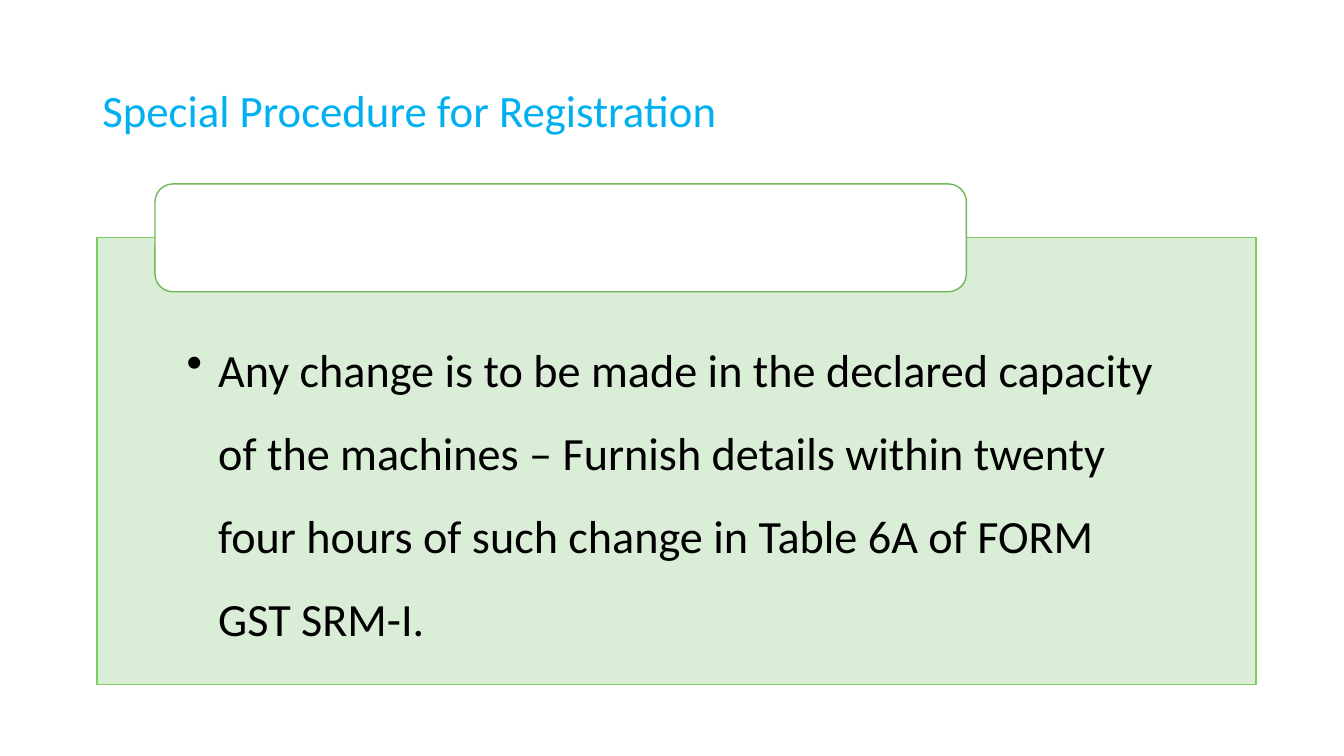
import pptx
import pptx.util
import pptx.dml.color
import pptx.enum.shapes
import pptx.enum.text
import pptx.oxml.ns
import lxml.etree

Pt = pptx.util.Pt
RGBColor = pptx.dml.color.RGBColor
MSO_SHAPE = pptx.enum.shapes.MSO_SHAPE
MSO_ANCHOR = pptx.enum.text.MSO_ANCHOR
PP_ALIGN = pptx.enum.text.PP_ALIGN
qn = pptx.oxml.ns.qn

FONT = "Calibri"
BLUE = RGBColor(0x00, 0xB0, 0xF0)
BLACK = RGBColor(0x00, 0x00, 0x00)
WHITE = RGBColor(0xFF, 0xFF, 0xFF)
PALE_GREEN = RGBColor(0xD7, 0xEC, 0xD3)
GREEN = RGBColor(0x7C, 0xCA, 0x62)
DARK_GREEN = RGBColor(0x71, 0xB7, 0x59)


def add_box(slide, kind, left, top, width, height, fill, line):
    sp = slide.shapes.add_shape(kind, Pt(left), Pt(top), Pt(width), Pt(height))
    sp.shadow.inherit = False
    sp.fill.solid()
    sp.fill.fore_color.rgb = fill
    sp.line.color.rgb = line
    sp.line.width = Pt(1)
    return sp


def set_opacity(sp, percent):
    color = sp.fill._xPr.find(qn("a:solidFill"))[0]
    lxml.etree.SubElement(color, qn("a:alpha"), val=str(percent * 1000))


def write_text(tf, text, size, color, spacing, anchor):
    tf.word_wrap = True
    tf.vertical_anchor = anchor
    p = tf.paragraphs[0]
    p.text = text
    p.alignment = PP_ALIGN.LEFT
    p.line_spacing = spacing
    r = p.runs[0]
    r.font.name = FONT
    r.font.size = Pt(size)
    r.font.color.rgb = color
    return p


def add_bullet(p, indent):
    pPr = p._p.get_or_add_pPr()
    pPr.set("marL", str(Pt(indent)))
    pPr.set("indent", str(-Pt(indent)))
    lxml.etree.SubElement(pPr, qn("a:buChar"), char="•")


def main():
    prs = pptx.Presentation()
    prs.slide_width, prs.slide_height = Pt(960), Pt(540)
    slide = prs.slides.add_slide(prs.slide_layouts[6])

    # Title
    title = slide.shapes.add_textbox(Pt(66), Pt(28.8), Pt(828), Pt(104.4))
    write_text(title.text_frame, "Special Procedure for Registration",
               32, BLUE, 0.9, MSO_ANCHOR.MIDDLE)

    # Green panel with the rule
    panel = add_box(slide, MSO_SHAPE.RECTANGLE, 69.2, 169.8, 828, 319.2,
                    PALE_GREEN, GREEN)
    set_opacity(panel, 90)
    tf = panel.text_frame
    tf.margin_left = tf.margin_right = Pt(64.2)
    tf.margin_top, tf.margin_bottom = Pt(54), Pt(18.7)
    p = write_text(tf, "Any change is to be made in the declared capacity of the "
                   "machines – Furnish details within twenty four hours of such "
                   "change in Table 6A of FORM GST SRM-I.",
                   33, BLACK, 1.5, MSO_ANCHOR.TOP)
    add_bullet(p, 22.5)

    # Empty heading tab over the panel's top edge
    add_box(slide, MSO_SHAPE.ROUNDED_RECTANGLE, 110.7, 131.4, 579.6, 77,
            WHITE, DARK_GREEN)

    prs.save("out.pptx")


if __name__ == "__main__":
    main()
